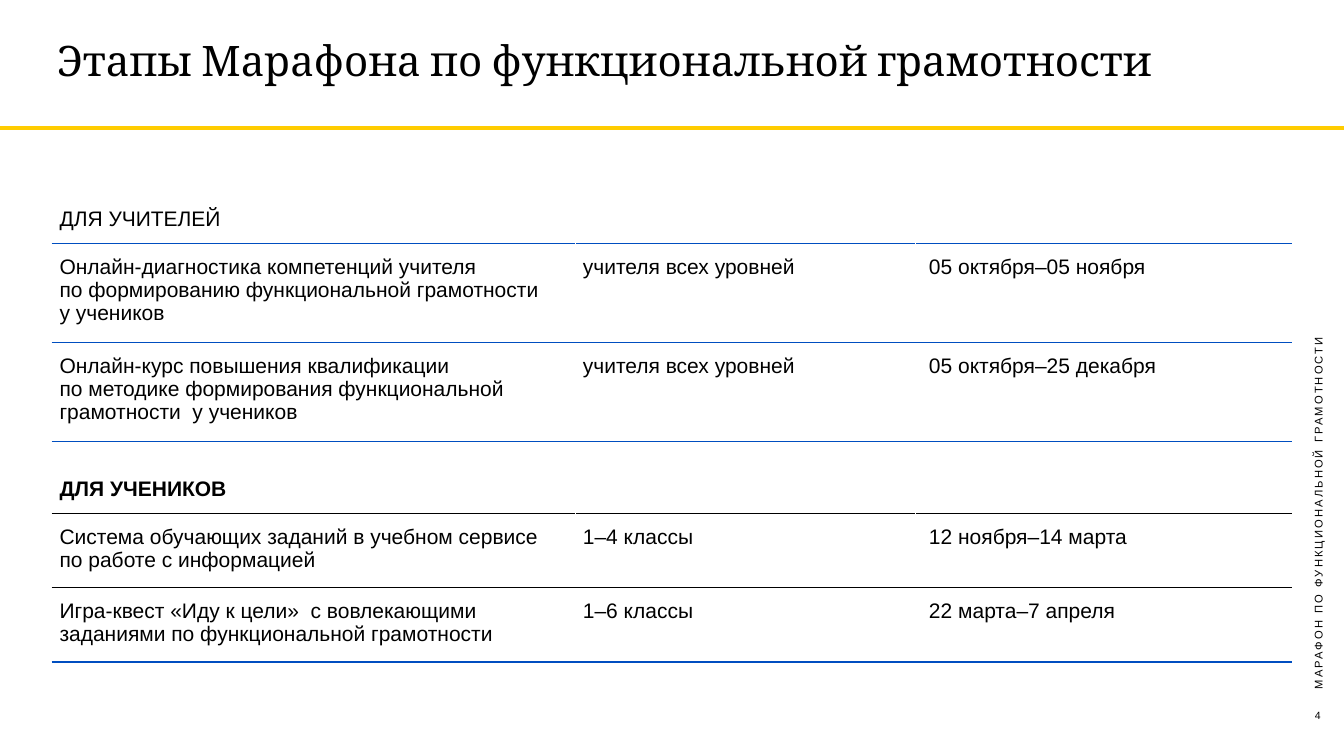
import pptx
import pptx.dml.color
import pptx.enum.shapes
import pptx.enum.text
import pptx.oxml
import pptx.oxml.ns
import pptx.util
from lxml import etree

Cm = pptx.util.Cm
Pt = pptx.util.Pt
ANCHOR = pptx.enum.text.MSO_ANCHOR
ALIGN = pptx.enum.text.PP_ALIGN

SLIDE_WIDTH, SLIDE_HEIGHT = 67.72, 38.1
TITLE = "Этапы Марафона по функциональной грамотности"
SIDE_LABEL = "МАРАФОН ПО ФУНКЦИОНАЛЬНОЙ ГРАМОТНОСТИ"
PAGE_NUMBER = "4"
BLACK, BLUE, YELLOW = "000000", "004EC0", "FFCC00"

COLUMN_WIDTHS = [26.37, 17.15, 18.95]
CELL_LEFT_MARGINS = [0.38, 0.38, 0.67]
STAGES = [
    ("ДЛЯ УЧИТЕЛЕЙ",),
    ("Онлайн-диагностика компетенций учителя\vпо формированию функциональной грамотности\vу учеников",
     "учителя всех уровней", "05 октября–05 ноября"),
    ("Онлайн-курс повышения квалификации\vпо методике формирования функциональной грамотности  у учеников",
     "учителя всех уровней", "05 октября–25 декабря"),
    ("ДЛЯ УЧЕНИКОВ",),
    ("Система обучающих заданий в учебном сервисе\nпо работе с информацией",
     "1–4 классы", "12 ноября–14 марта"),
    ("Игра-квест «Иду к цели»  с вовлекающими заданиями по функциональной грамотности",
     "1–6 классы", "22 марта–7 апреля"),
]
ROW_HEIGHTS = [2.42, 4.8, 4.8, 3.63, 3.63, 3.65]
ROW_RULES = [(BLUE, 1.5), (BLUE, 2.25), None, (BLACK, 1), (BLACK, 1), (BLUE, 2.25)]
BOLD_ROW = 3


def color(value):
    return pptx.dml.color.RGBColor.from_string(value)


def write(frame, text, size, font="Arial", bold=False, align=ALIGN.LEFT,
          anchor=ANCHOR.TOP, line_spacing=1.0, tracking=None):
    frame.text = text
    frame.word_wrap = True
    frame.vertical_anchor = anchor
    for paragraph in frame.paragraphs:
        paragraph.alignment = align
        paragraph.line_spacing = line_spacing
        for run in paragraph.runs:
            run.font.name = font
            run.font.size = Pt(size)
            run.font.bold = bold
            run.font.color.rgb = color(BLACK)
            if tracking:
                run.font._element.set("spc", str(tracking * 100))


def add_text_box(slide, text, left, top, width, height, side_margin, **text_format):
    shape = slide.shapes.add_textbox(Cm(left), Cm(top), Cm(width), Cm(height))
    frame = shape.text_frame
    frame.margin_left = frame.margin_right = Cm(side_margin)
    write(frame, text, **text_format)
    return shape


def set_rule(cell, edge, rule):
    if rule is None:
        return
    rule_color, width = rule
    border = pptx.oxml.parse_xml(
        f'<a:{edge} {pptx.oxml.ns.nsdecls("a")} w="{Pt(width)}"><a:solidFill>'
        f'<a:srgbClr val="{rule_color}"/></a:solidFill></a:{edge}>')
    cell._tc.get_or_add_tcPr().insert(0, border)


def add_title(slide):
    title = slide.shapes.title
    title.left, title.top, title.width, title.height = Cm(2.62), Cm(0), Cm(62.46), Cm(6.35)
    write(title.text_frame, TITLE, size=60, font="Cambria", anchor=ANCHOR.MIDDLE, line_spacing=0.9)


def add_title_rule(slide):
    line = slide.shapes.add_connector(
        pptx.enum.shapes.MSO_CONNECTOR.STRAIGHT, Cm(0), Cm(6.45), Cm(SLIDE_WIDTH), Cm(6.45))
    line.line.color.rgb = color(YELLOW)
    line.line.width = Pt(5)
    etree.SubElement(line._element.spPr, pptx.oxml.ns.qn("a:effectLst"))


def add_stage_table(slide):
    table = slide.shapes.add_table(
        len(STAGES), len(COLUMN_WIDTHS), Cm(2.62), Cm(9.78),
        Cm(sum(COLUMN_WIDTHS)), Cm(sum(ROW_HEIGHTS))).table
    table.first_row = table.horz_banding = False
    for column, width in zip(table.columns, COLUMN_WIDTHS):
        column.width = Cm(width)
    for row_index, texts in enumerate(STAGES):
        table.rows[row_index].height = Cm(ROW_HEIGHTS[row_index])
        is_heading = len(texts) == 1
        for column_index, margin in enumerate(CELL_LEFT_MARGINS):
            cell = table.cell(row_index, column_index)
            cell.fill.background()
            cell.margin_left, cell.margin_right = Cm(margin), Cm(0.38)
            cell.margin_top = cell.margin_bottom = Cm(0.64)
            cell.vertical_anchor = ANCHOR.BOTTOM if is_heading else ANCHOR.TOP
            set_rule(cell, "lnB", ROW_RULES[row_index])
            if row_index:
                set_rule(cell, "lnT", ROW_RULES[row_index - 1])
            if column_index < len(texts):
                write(cell.text_frame, texts[column_index], size=30,
                      bold=row_index == BOLD_ROW, line_spacing=0.97)
        if is_heading:
            table.cell(row_index, 0).merge(table.cell(row_index, len(COLUMN_WIDTHS) - 1))


def main():
    presentation = pptx.Presentation()
    presentation.slide_width, presentation.slide_height = Cm(SLIDE_WIDTH), Cm(SLIDE_HEIGHT)
    slide = presentation.slides.add_slide(presentation.slide_layouts[5])
    add_title_rule(slide)
    add_title(slide)
    add_text_box(slide, PAGE_NUMBER, 65.81, 35.61, 1.19, 2.03, 0, size=15, align=ALIGN.CENTER)
    add_stage_table(slide)
    side_label = add_text_box(slide, SIDE_LABEL, 53.92, 22.07, 25, 0.81, 0.25,
                              size=16, anchor=ANCHOR.MIDDLE, tracking=3)
    side_label.rotation = 270
    presentation.save("out.pptx")


if __name__ == "__main__":
    main()
